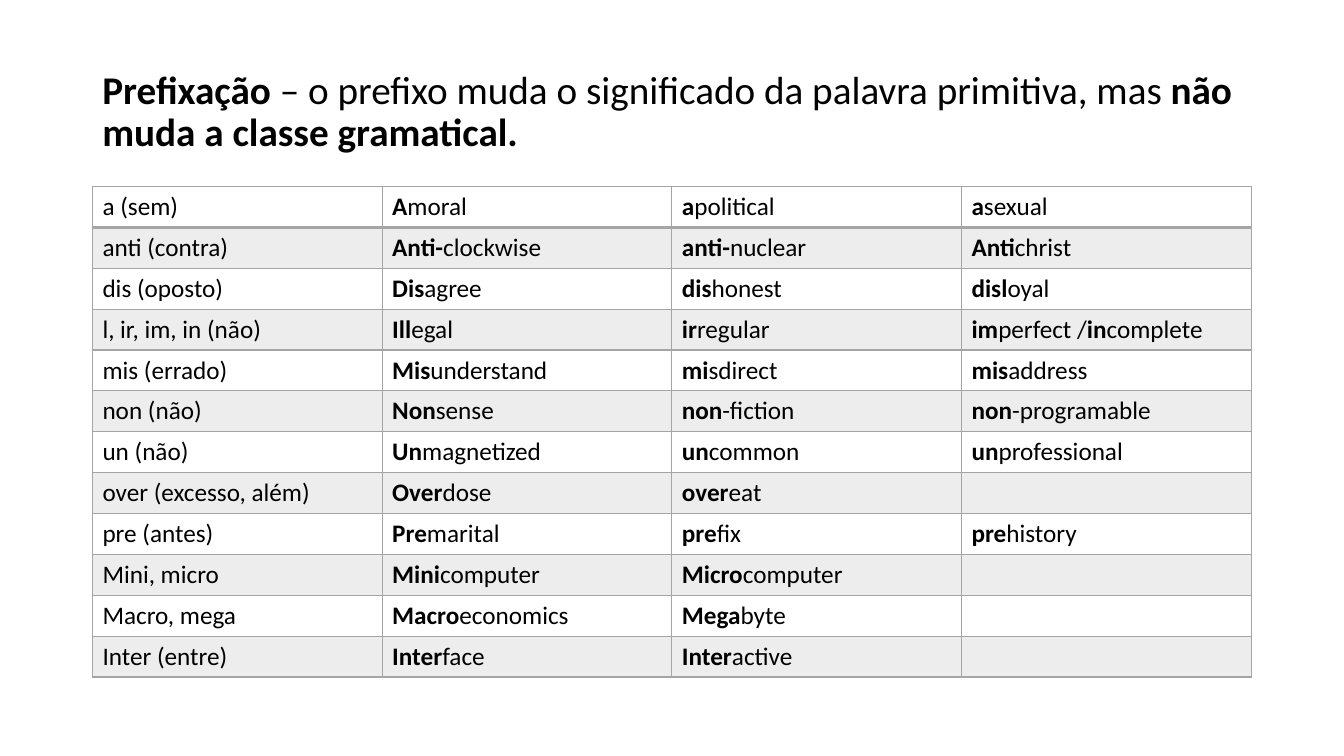
from dataclasses import dataclass

from lxml.etree import SubElement
from pptx import Presentation
from pptx.dml.color import RGBColor
from pptx.enum.text import MSO_ANCHOR
from pptx.oxml.ns import qn
from pptx.util import Cm, Pt


@dataclass(frozen=True)
class Theme:
    font: str = "Calibri"
    ink: str = "000000"
    grey: str = "A5A5A5"
    band_opacity: int = 20
    title_size: int = 28
    cell_size: int = 18
    line: int = 1
    header_line: int = 2


# Asterisks enclose the bold parts.
TITLE = ("*Prefixação* – o prefixo muda o significado da palavra primitiva, "
         "mas *não muda a classe gramatical.*")
PREFIXES = [
    ["a (sem)", "*A*moral", "*a*political", "*a*sexual"],
    ["anti (contra)", "*Anti-*clockwise", "*anti-*nuclear", "*Anti*christ"],
    ["dis (oposto)", "*Dis*agree", "*dis*honest", "*disl*oyal"],
    ["l, ir, im, in (não)", "*Ill*egal", "*ir*regular", "*im*perfect /*in*complete"],
    ["mis (errado)", "*Mis*understand", "*mi*sdirect", "*mis*address"],
    ["non (não)", "*Non*sense", "*non*-fiction", "*non*-programable"],
    ["un (não)", "*Un*magnetized", "*un*common", "*un*professional"],
    ["over (excesso, além)", "*Over*dose", "*over*eat", ""],
    ["pre (antes)", "*Pre*marital", "*pre*fix", "*pre*history"],
    ["Mini, micro", "*Mini*computer", "*Micro*computer", ""],
    ["Macro, mega", "*Macro*economics", "*Mega*byte", ""],
    ["Inter (entre)", "*Inter*face", "*Inter*active", ""],
]


class SlideBuilder:
    def __init__(self, slide, theme):
        self.slide = slide
        self.theme = theme

    def add_spans(self, para, text, size):
        """Add runs, switching bold on and off at each asterisk."""
        for index, part in enumerate(text.split("*")):
            if part:
                span = para.add_run()
                span.text = part
                span.font.name = self.theme.font
                span.font.size = Pt(size)
                span.font.bold = index % 2 == 1
                span.font.color.rgb = RGBColor.from_string(self.theme.ink)

    def title(self, text, left, top, width, height):
        box = self.slide.shapes.add_textbox(left, top, width, height)
        frame = box.text_frame
        frame.word_wrap = True
        frame.vertical_anchor = MSO_ANCHOR.MIDDLE
        para = frame.paragraphs[0]
        para.line_spacing = 0.9
        self.add_spans(para, text, self.theme.title_size)

    def borders(self, cell, bottom):
        line = self.theme.line
        properties = cell._tc.get_or_add_tcPr()
        for side, width in zip("LRTB", (line, line, line, bottom)):
            edge = SubElement(properties, qn(f"a:ln{side}"), w=str(Pt(width)))
            fill = SubElement(edge, qn("a:solidFill"))
            SubElement(fill, qn("a:srgbClr"), val=self.theme.grey)

    def band(self, cell):
        cell.fill.solid()
        cell.fill.fore_color.rgb = RGBColor.from_string(self.theme.grey)
        color = cell._tc.tcPr.find(qn("a:solidFill")).find(qn("a:srgbClr"))
        SubElement(color, qn("a:alpha"), val=str(self.theme.band_opacity * 1000))

    def table(self, rows, left, top, column_width, row_height):
        count = len(rows[0])
        table = self.slide.shapes.add_table(
            len(rows), count, left, top,
            column_width * count, row_height * len(rows)).table
        table.first_row = table.horz_banding = False
        for column in table.columns:
            column.width = column_width
        for index, texts in enumerate(rows):
            table.rows[index].height = row_height
            bottom = self.theme.line if index else self.theme.header_line
            for cell, text in zip(table.rows[index].cells, texts):
                self.borders(cell, bottom)
                if index % 2:
                    self.band(cell)
                else:
                    cell.fill.background()
                self.add_spans(cell.text_frame.paragraphs[0], text, self.theme.cell_size)


def main():
    deck = Presentation()
    deck.slide_width, deck.slide_height = Cm(33.87), Cm(19.05)
    page = SlideBuilder(deck.slides.add_slide(deck.slide_layouts[6]), Theme())
    page.title(TITLE, Cm(2.33), Cm(1.01), Cm(29.21), Cm(3.68))
    page.table(PREFIXES, Cm(2.33), Cm(4.7), Cm(7.3), Cm(1.03))
    deck.save("out.pptx")


if __name__ == "__main__":
    main()
